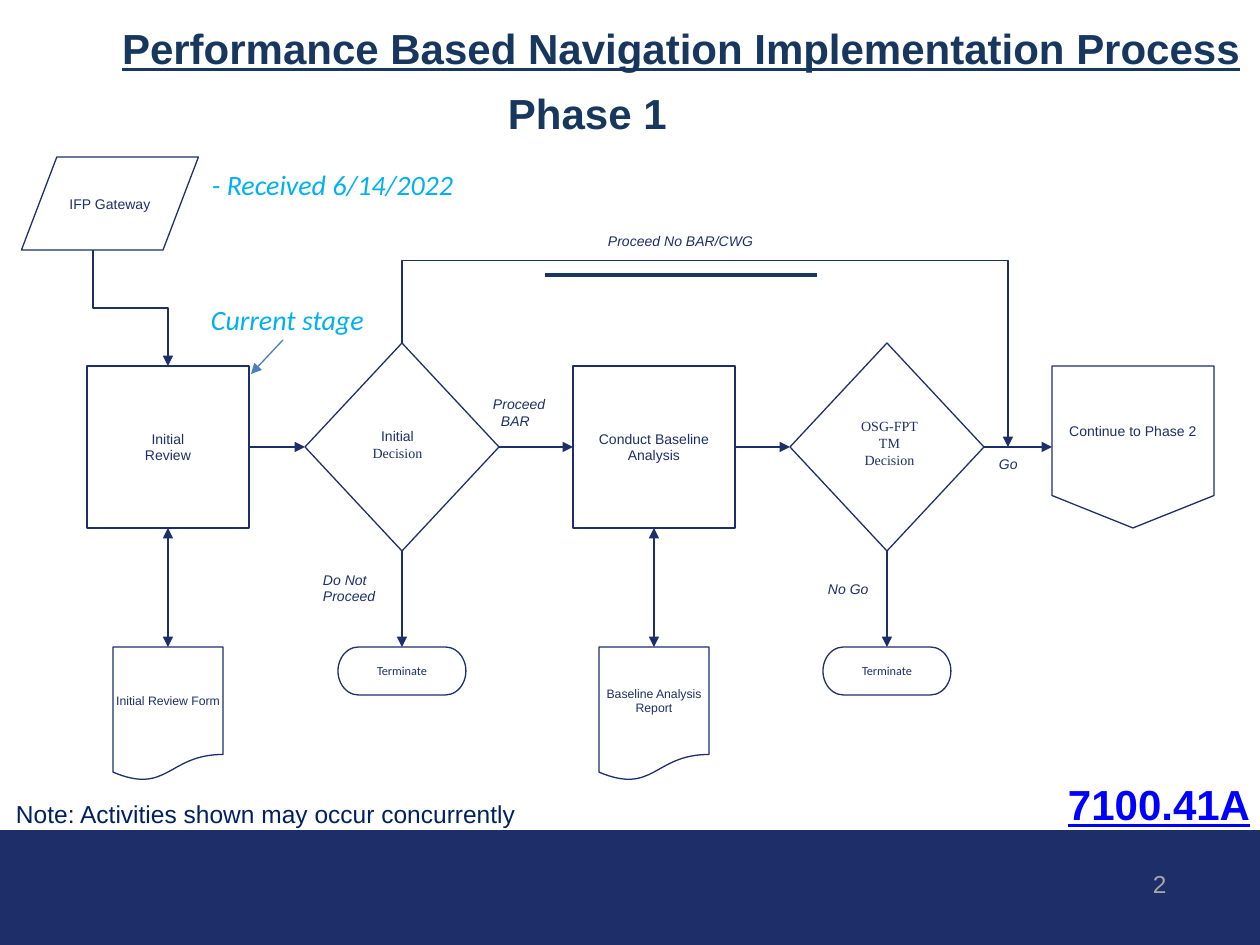
from dataclasses import dataclass

from lxml.etree import SubElement
from pptx import Presentation
from pptx.dml.color import RGBColor
from pptx.enum.shapes import MSO_CONNECTOR as CONNECTOR, MSO_SHAPE as SHAPE
from pptx.enum.text import MSO_ANCHOR as ANCHOR, PP_ALIGN as ALIGN
from pptx.oxml.ns import qn
from pptx.util import Pt

PX = 914400 / 126
TOP, LEFT, BOTTOM, RIGHT = range(4)


@dataclass(frozen=True)
class Theme:
    ink: str = "1D2F68"
    band: str = "1D2E68"
    title: str = "17375E"
    note: str = "002060"
    status: str = "00B0F0"
    pointer: str = "4B7EBC"
    reference: str = "0000FF"
    page: str = "A6A6A6"
    font: str = "Arial"
    status_font: str = "Calibri"
    decision_font: str = "Times New Roman"
    heading_size: int = 24
    status_size: int = 16
    note_size: int = 14
    label_size: int = 8
    small_size: int = 7
    line_width: float = 0.75


THEME = Theme()


def px(*lengths):
    return [round(length * PX) for length in lengths]


def rgb(color):
    return RGBColor.from_string(color)


def write_text(shape, lines, size=THEME.label_size, color=THEME.ink, fonts=(THEME.font,),
               bold=False, italic=False, underline=False, align=ALIGN.LEFT,
               anchor=ANCHOR.TOP, inset=(13, 6)):
    """Write one paragraph per line; the last of fonts serves all remaining lines."""
    frame = shape.text_frame
    frame.word_wrap = True
    frame.vertical_anchor = anchor
    frame.margin_left = frame.margin_right = px(inset[0])[0]
    frame.margin_top = frame.margin_bottom = px(inset[1])[0]
    frame.text = "\n".join(lines)
    for index, paragraph in enumerate(frame.paragraphs):
        paragraph.alignment = align
        font = paragraph.font
        font.name = fonts[min(index, len(fonts) - 1)]
        font.size = Pt(size)
        font.bold, font.italic, font.underline = bold, italic, underline
        font.color.rgb = rgb(color)


def add_text(slide, box, *lines, **text_format):
    shape = slide.shapes.add_textbox(*px(*box))
    write_text(shape, lines, **text_format)
    return shape


def add_label(slide, box, *lines):
    return add_text(slide, box, *lines, italic=True, inset=(13, 0))


def add_step(slide, kind, center, top, extent, *lines, **text_format):
    """Add an outlined flowchart symbol placed by its centre line and top."""
    width, height = extent
    shape = slide.shapes.add_shape(kind, *px(center - width / 2, top, width, height))
    shape.shadow.inherit = False
    shape.fill.background()
    shape.line.color.rgb = rgb(THEME.ink)
    shape.line.width = Pt(THEME.line_width)
    if lines:
        write_text(shape, lines, align=ALIGN.CENTER, anchor=ANCHOR.MIDDLE,
                   inset=(0, 0), **text_format)
    return shape


def add_band(slide, box):
    shape = slide.shapes.add_shape(SHAPE.RECTANGLE, *px(*box))
    shape.shadow.inherit = False
    shape.fill.solid()
    shape.fill.fore_color.rgb = rgb(THEME.band)
    shape.line.color.rgb = rgb(THEME.band)
    shape.line.width = Pt(THEME.line_width)


def add_line(slide, start=(0, 0), end=(0, 0), kind=CONNECTOR.STRAIGHT, color=THEME.ink,
             width=THEME.line_width, arrows=("tailEnd",)):
    connector = slide.shapes.add_connector(kind, *px(*start, *end))
    connector.line.color.rgb = rgb(color)
    connector.line.width = Pt(width)
    outline = connector.line._get_or_add_ln()
    for arrow in arrows:
        SubElement(outline, qn(f"a:{arrow}"), type="triangle")
    SubElement(connector._element.spPr, qn("a:effectLst"))
    return connector


def join(slide, source, source_side, target, target_side, both_ends=False):
    arrows = ("headEnd", "tailEnd") if both_ends else ("tailEnd",)
    connector = add_line(slide, arrows=arrows)
    connector.begin_connect(source, source_side)
    connector.end_connect(target, target_side)


def add_elbow(slide, start, end, bend):
    """Leave and arrive vertically, turning at the bend fraction of the drop."""
    (x1, y1), (x2, y2) = start, end
    middle_x, middle_y = (x1 + x2) / 2, (y1 + y2) / 2
    half_run, half_drop = (x2 - x1) / 2, (y2 - y1) / 2
    connector = add_line(slide, (middle_x + half_drop, middle_y - half_run),
                         (middle_x - half_drop, middle_y + half_run), CONNECTOR.ELBOW)
    properties = connector._element.spPr
    properties.find(qn("a:xfrm")).set("rot", str(270 * 60000))
    geometry = properties.find(qn("a:prstGeom"))
    adjustments = geometry.find(qn("a:avLst"))
    if adjustments is None:
        adjustments = SubElement(geometry, qn("a:avLst"))
    SubElement(adjustments, qn("a:gd"), name="adj1", fmla=f"val {round(bend * 100000)}")


def add_headings(slide):
    heading = dict(size=THEME.heading_size, bold=True)
    add_text(slide, (-21, 23, 1404, 60), "Performance Based Navigation Implementation Process",
             color=THEME.title, underline=True, align=ALIGN.CENTER, inset=(0, 0), **heading)
    add_text(slide, (495, 82, 200, 60), "Phase 1", color=THEME.title, **heading)
    add_line(slide, (545, 275), (817, 275), color=THEME.title, width=2.25, arrows=())
    add_text(slide, (1055, 773, 209, 60), "7100.41A", color=THEME.reference,
             underline=True, **heading)


def add_footer(slide):
    add_band(slide, (0, 831, 1260, 113))
    add_text(slide, (10, 793, 530, 38), "Note: Activities shown may occur concurrently",
             size=THEME.note_size, color=THEME.note, inset=(6, 6))
    add_text(slide, (1153, 869, 20, 30), "2", size=THEME.note_size, color=THEME.page,
             inset=(0, 0))


def add_flow(slide):
    review_x, decision_x, analysis_x, approval_x, next_x = 168, 402, 654, 887, 1133
    step_top, diamond_top, outcome_top = 366, 343, 647
    square, diamond, document, pill = (162, 162), (194, 208), (110, 134), (128, 48)

    add_step(slide, SHAPE.FLOWCHART_DATA, 110, 157, (177, 93), "IFP Gateway")
    review = add_step(slide, SHAPE.RECTANGLE, review_x, step_top, square, "Initial", "Review")
    analysis = add_step(slide, SHAPE.RECTANGLE, analysis_x, step_top, square,
                        "Conduct Baseline Analysis")
    next_phase = add_step(slide, SHAPE.FLOWCHART_OFFPAGE_CONNECTOR, next_x, step_top, square,
                          "Continue to Phase 2")
    decision, approval = [
        add_step(slide, SHAPE.FLOWCHART_DECISION, center, diamond_top, diamond)
        for center in (decision_x, approval_x)]

    for step, center, name in ((review, review_x, "Initial Review Form"),
                               (analysis, analysis_x, "Baseline Analysis Report")):
        form = add_step(slide, SHAPE.FLOWCHART_DOCUMENT, center, outcome_top, document, name,
                        size=THEME.small_size)
        join(slide, step, BOTTOM, form, TOP, both_ends=True)
    for step, center in ((decision, decision_x), (approval, approval_x)):
        stop = add_step(slide, SHAPE.FLOWCHART_TERMINATOR, center, outcome_top, pill,
                        "Terminate", size=THEME.small_size, fonts=(THEME.status_font,))
        join(slide, step, BOTTOM, stop, TOP)

    sequence = (review, decision, analysis, approval, next_phase)
    for source, target in zip(sequence, sequence[1:]):
        join(slide, source, RIGHT, target, LEFT)
    add_elbow(slide, (93, 250), (review_x, step_top), 0.5)
    add_elbow(slide, (decision_x, diamond_top), (1008, 447), -0.79)


def add_flow_labels(slide):
    add_label(slide, (595, 233, 205, 21), "Proceed No BAR/CWG")
    proceed = add_label(slide, (480, 396, 95, 42), "Proceed", "BAR")
    proceed.text_frame.paragraphs[1]._p.get_or_add_pPr().set("marL", str(px(8)[0]))
    add_label(slide, (310, 571, 126, 42), "Do Not", "Proceed")
    add_label(slide, (815, 581, 89, 21), "No Go")
    add_label(slide, (986, 456, 66, 21), "Go")
    add_text(slide, (345, 422, 105, 47), "Initial", "Decision", align=ALIGN.CENTER,
             fonts=(THEME.font, THEME.decision_font))
    add_text(slide, (837, 412, 105, 63), "OSG-FPT TM", "Decision", align=ALIGN.CENTER,
             fonts=(THEME.decision_font,))


def add_status(slide):
    status = dict(size=THEME.status_size, color=THEME.status, fonts=(THEME.status_font,),
                  italic=True)
    add_text(slide, (199, 162, 287, 47), "- Received 6/14/2022", **status)
    add_text(slide, (198, 297, 276, 47), "Current stage", **status)
    add_line(slide, (283, 340), (251, 374), color=THEME.pointer)


def main():
    presentation = Presentation()
    presentation.slide_width, presentation.slide_height = px(1260, 945)
    slide = presentation.slides.add_slide(presentation.slide_layouts[6])
    add_footer(slide)
    add_headings(slide)
    add_flow(slide)
    add_flow_labels(slide)
    add_status(slide)
    presentation.save("out.pptx")


if __name__ == "__main__":
    main()
